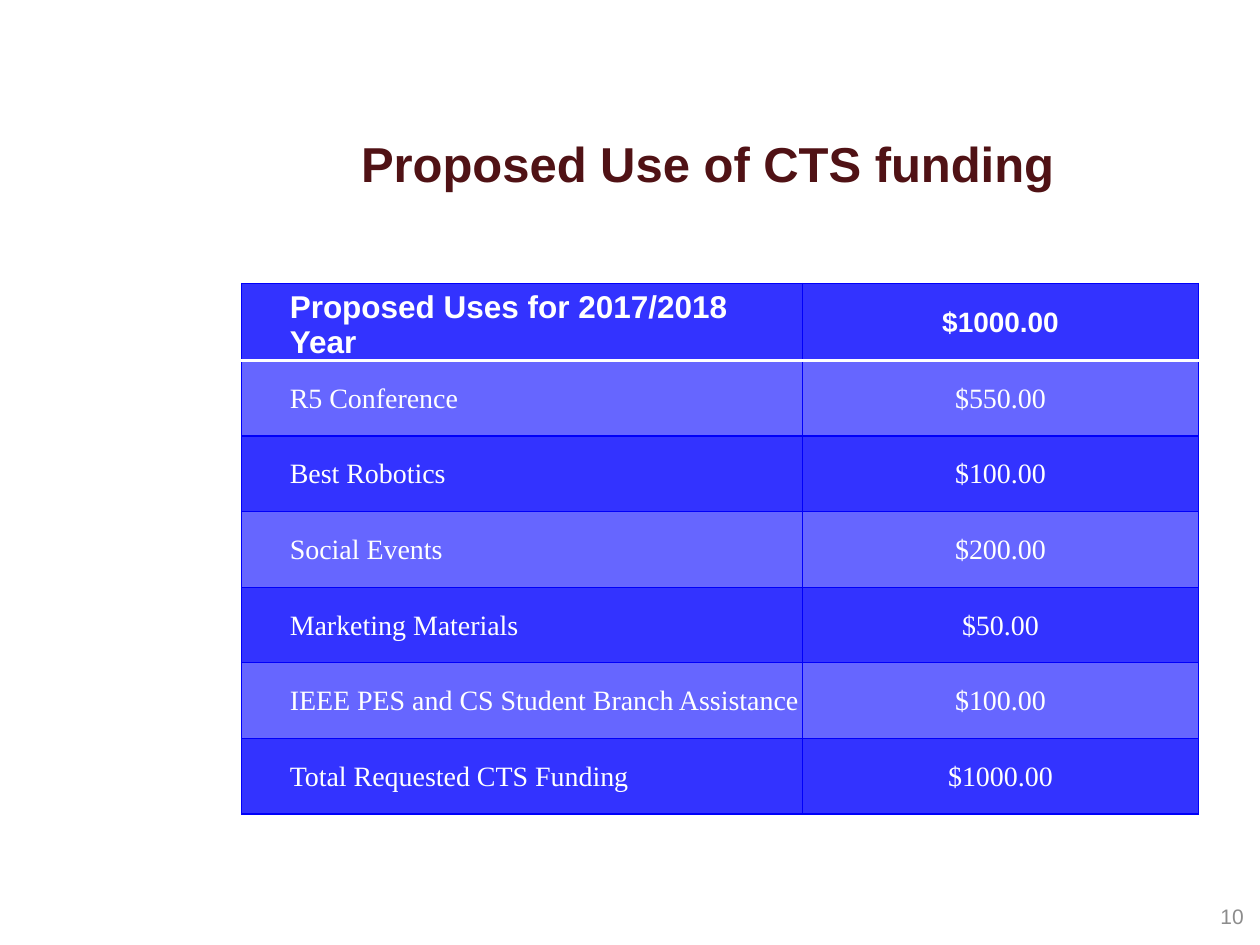
import pptx
import pptx.dml.color
import pptx.enum.text
import pptx.oxml
import pptx.oxml.ns
import pptx.util

Inches, Pt = pptx.util.Inches, pptx.util.Pt
ALIGN = pptx.enum.text.PP_ALIGN
ANCHOR = pptx.enum.text.MSO_ANCHOR

TITLE = "Proposed Use of CTS funding "
PAGE = "10"
BUDGET = [
    ("Proposed Uses for 2017/2018 Year", "$1000.00"),
    ("R5 Conference", "$550.00"),
    ("Best Robotics", "$100.00"),
    ("Social Events", "$200.00"),
    ("Marketing Materials", "$50.00"),
    ("IEEE PES and CS Student Branch Assistance", "$100.00"),
    ("Total Requested CTS Funding", "$1000.00"),
]
COLORS = {
    "title": "501215",
    "page": "8C8C8C",
    "text": "FFFFFF",
    "dark band": "3333FF",
    "light band": "6666FF",
    "grid": "0000F9",
    "header rule": "FFFFFF",
}
LEFT, TOP = 1.92, 2.25
COLUMNS = (4.45, 3.14)
ROW_HEIGHT = 0.6


def rgb(name):
    return pptx.dml.color.RGBColor.from_string(COLORS[name])


def style(paragraph, font_name, size, color, align, bold=False):
    paragraph.alignment = align
    font = paragraph.font
    font.name, font.size, font.bold = font_name, Pt(size), bold
    font.color.rgb = rgb(color)


def add_label(slide, box, text, **look):
    frame = slide.shapes.add_textbox(*map(Inches, box)).text_frame
    frame.word_wrap = True
    frame.vertical_anchor = ANCHOR.MIDDLE
    frame.text = text
    style(frame.paragraphs[0], "Arial", **look)


def set_borders(cell, edges):
    """Draw cell edges, given in the order left, right, top, bottom."""
    properties = cell._tc.get_or_add_tcPr()
    for position, (edge, (color, width)) in enumerate(edges.items()):
        properties.insert(position, pptx.oxml.parse_xml(
            f'<a:{edge} {pptx.oxml.ns.nsdecls("a")} w="{Pt(width)}">'
            f'<a:solidFill><a:srgbClr val="{COLORS[color]}"/></a:solidFill></a:{edge}>'))


def add_budget(slide):
    table = slide.shapes.add_table(
        len(BUDGET), len(COLUMNS), Inches(LEFT), Inches(TOP),
        Inches(sum(COLUMNS)), Inches(ROW_HEIGHT * len(BUDGET))).table
    for column, width in zip(table.columns, COLUMNS):
        column.width = Inches(width)
    grid, rule = ("grid", 0.75), ("header rule", 2)
    for r, entry in enumerate(BUDGET):
        table.rows[r].height = Inches(ROW_HEIGHT)
        header = r == 0
        for c, text in enumerate(entry):
            is_use = c == 0
            cell = table.cell(r, c)
            cell.text = text
            cell.margin_left = Inches(0.38 if is_use else 0.01)
            cell.margin_right = Inches(0.1 if header and is_use else 0.01)
            cell.margin_top, cell.margin_bottom = Inches(0.01), 0
            cell.vertical_anchor = ANCHOR.BOTTOM if header and is_use else ANCHOR.MIDDLE
            cell.fill.solid()
            cell.fill.fore_color.rgb = rgb("light band" if r % 2 else "dark band")
            style(cell.text_frame.paragraphs[0],
                  "Arial" if header else "Times New Roman",
                  18 if header and is_use else 16, "text",
                  ALIGN.LEFT if is_use else ALIGN.CENTER, bold=header)
            set_borders(cell, {"lnL": grid, "lnR": grid,
                               "lnT": rule if r == 1 else grid,
                               "lnB": rule if header else grid})


def main():
    deck = pptx.Presentation()
    deck.slide_width, deck.slide_height = Inches(10), Inches(7.5)
    slide = deck.slides.add_slide(deck.slide_layouts[6])
    add_label(slide, (7.64, 7.07, 2.33, 0.4), PAGE,
              size=12, color="page", align=ALIGN.RIGHT)
    add_budget(slide)
    add_label(slide, (LEFT, 0.67, 7.5, 1.25), TITLE,
              size=28, color="title", align=ALIGN.CENTER, bold=True)
    deck.save("out.pptx")


if __name__ == "__main__":
    main()
